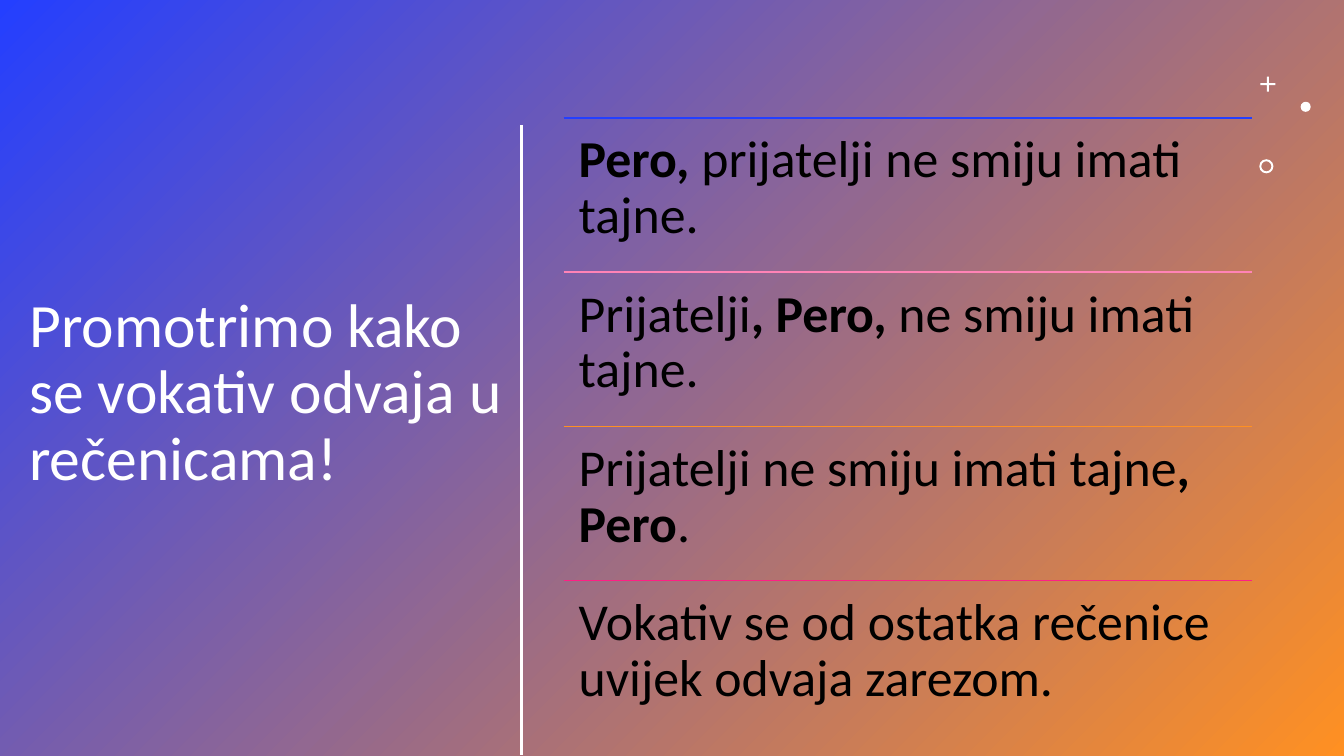
import pptx
import pptx.util
import pptx.dml.color
import pptx.enum.shapes
import pptx.enum.text
import pptx.oxml.ns
import lxml.etree

Inches = pptx.util.Inches
SHAPES = pptx.enum.shapes.MSO_SHAPE
ANCHOR = pptx.enum.text.MSO_ANCHOR
FONT = "Calibri"
COLORS = {
    "blue": "243FFF",
    "orange": "FF9022",
    "rose": "FF83B6",
    "magenta": "FF1F85",
    "white": "FFFFFF",
    "black": "000000",
}
SENTENCES = [
    ("blue", [("Pero,", True), (" prijatelji ne smiju imati tajne.", False)]),
    ("rose", [("Prijatelji", False), (", Pero,", True), (" ne smiju imati tajne.", False)]),
    ("orange", [("Prijatelji ne smiju imati tajne", False), (", Pero", True), (".", False)]),
    ("magenta", [("Vokativ se od ostatka rečenice uvijek odvaja zarezom.", False)]),
]


def rgb(color):
    return pptx.dml.color.RGBColor.from_string(COLORS[color])


def add_rule(slide, x1, y1, x2, y2, color, width):
    rule = slide.shapes.add_connector(
        pptx.enum.shapes.MSO_CONNECTOR.STRAIGHT,
        Inches(x1), Inches(y1), Inches(x2), Inches(y2))
    rule.line.color.rgb = rgb(color)
    rule.line.width = pptx.util.Pt(width)
    lxml.etree.SubElement(rule.element.spPr, pptx.oxml.ns.qn("a:effectLst"))


def add_plain_shape(slide, preset, left, top, width, height):
    shape = slide.shapes.add_shape(
        preset, Inches(left), Inches(top), Inches(width), Inches(height))
    shape.shadow.inherit = False
    shape.line.fill.background()
    return shape


def write_runs(frame, runs, size, color):
    frame.word_wrap = True
    frame.auto_size = pptx.enum.text.MSO_AUTO_SIZE.NONE
    paragraph = frame.paragraphs[0]
    paragraph.alignment = pptx.enum.text.PP_ALIGN.LEFT
    paragraph.line_spacing = 0.9
    for text, bold in runs:
        run = paragraph.add_run()
        run.text = text
        run.font.name = FONT
        run.font.size = pptx.util.Pt(size)
        run.font.bold = bold
        run.font.color.rgb = rgb(color)


def add_backdrop(slide, left, top, width, height):
    backdrop = add_plain_shape(slide, SHAPES.RECTANGLE, left, top, width, height)
    backdrop.fill.gradient()
    backdrop.fill.gradient_angle = 315
    for stop, color, position in zip(backdrop.fill.gradient_stops, ("blue", "orange"), (0, 1)):
        stop.color.rgb = rgb(color)
        stop.position = position
    slide.shapes.title.element.addprevious(backdrop.element)


def place_heading(slide, left, top, width, height):
    heading = slide.shapes.title
    heading.left, heading.top = Inches(left), Inches(top)
    heading.width, heading.height = Inches(width), Inches(height)
    heading.text_frame.vertical_anchor = ANCHOR.MIDDLE
    write_runs(heading.text_frame,
               [("Promotrimo kako se vokativ odvaja u rečenicama!", False)], 44, "white")


def add_ornaments(slide, left, top):
    ornaments = [
        (SHAPES.CROSS, 0.01, 0, 0.15, 0.43),
        (SHAPES.OVAL, 0.41, 0.25, 0.1, None),
        (SHAPES.DONUT, 0, 0.82, 0.14, 0.14),
    ]
    for preset, dx, dy, size, adjustment in ornaments:
        ornament = add_plain_shape(slide, preset, left + dx, top + dy, size, size)
        ornament.fill.solid()
        ornament.fill.fore_color.rgb = rgb("white")
        if adjustment is not None:
            ornament.adjustments[0] = adjustment


def add_sentences(slide, left, top, width, height):
    row_height = height / len(SENTENCES)
    for index, (color, runs) in enumerate(SENTENCES):
        row_top = top + index * row_height
        add_rule(slide, left, row_top, left + width, row_top, color, 1)
        sentence = slide.shapes.add_textbox(
            Inches(left), Inches(row_top), Inches(width), Inches(row_height))
        frame = sentence.text_frame
        frame.margin_left = frame.margin_right = Inches(0.15)
        frame.margin_top = frame.margin_bottom = Inches(0.15)
        frame.vertical_anchor = ANCHOR.TOP
        write_runs(frame, runs, 37, "black")


def build_vocative_slide(deck):
    slide = deck.slides.add_slide(deck.slide_layouts[5])
    add_backdrop(slide, 0, 0, 13.33, 7.5)
    place_heading(slide, 0.19, 0.85, 4.9, 6.11)
    add_ornaments(slide, 12.49, 0.76)
    add_rule(slide, 5.17, 1.24, 5.17, 7.49, "white", 2)
    add_sentences(slide, 5.59, 1.17, 6.83, 6.12)


def main():
    deck = pptx.Presentation()
    deck.slide_width, deck.slide_height = Inches(13.33), Inches(7.5)
    build_vocative_slide(deck)
    deck.save("out.pptx")


if __name__ == "__main__":
    main()
